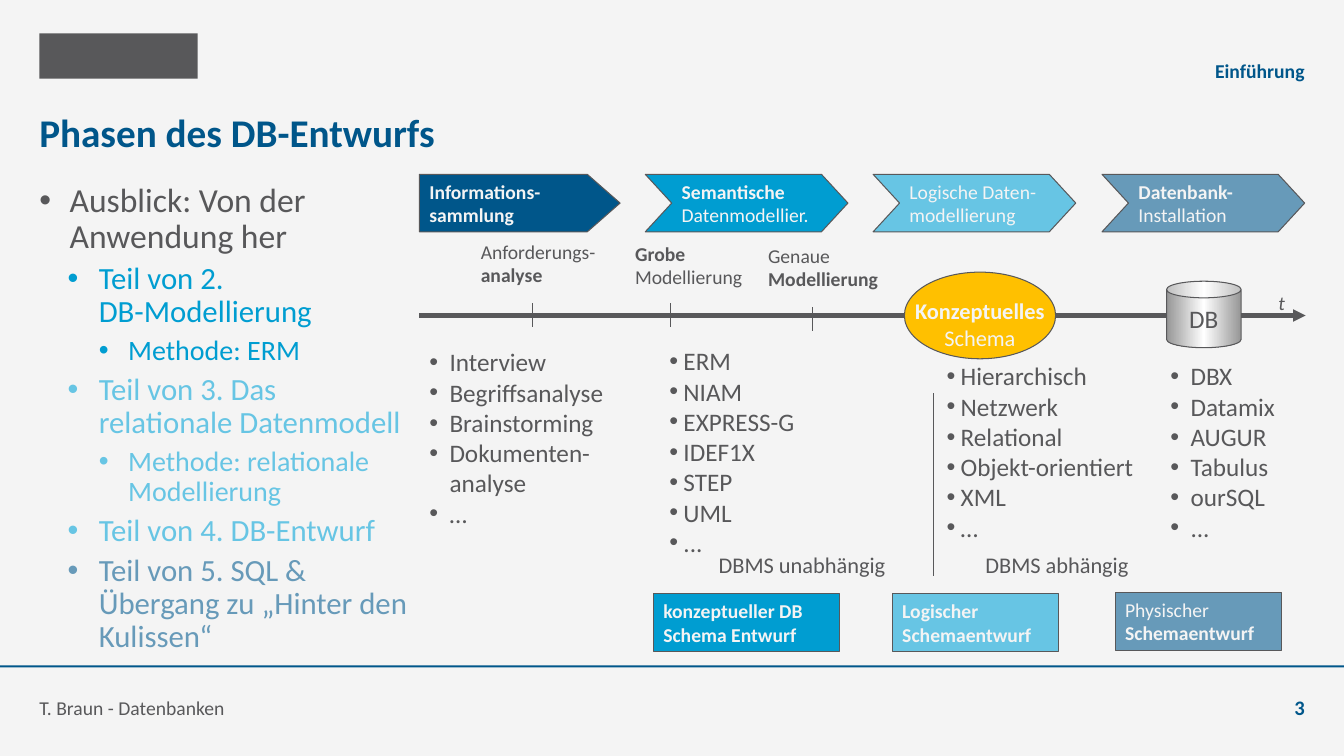
import copy

import pptx
import pptx.dml.color
import pptx.enum.shapes
import pptx.enum.text
import pptx.oxml
import pptx.oxml.ns
import pptx.util
from pptx.util import Inches

SHAPE = pptx.enum.shapes.MSO_SHAPE
ALIGN = pptx.enum.text.PP_ALIGN
ANCHOR = pptx.enum.text.MSO_ANCHOR
qn = pptx.oxml.ns.qn

FONT = "Calibri"
PALE, GREY, NAVY = "F4F4F4", "58585A", "00568A"
BLUE, SKY, STEEL, AMBER = "009DD1", "67C5E4", "679AB9", "FFC000"
NO_INSETS = (0, 0, 0, 0)

# ---- Content ----
# text, left, top, width, height, size, colour, bold, align, anchor
FRAME_TEXTS = [
    ("Phasen des DB-Entwurfs", 0.39, 0.99, 12.55, 0.63, 28, NAVY, True, ALIGN.LEFT, ANCHOR.MIDDLE),
    ("Einführung", 3.93, 0.43, 9.01, 0.39, 14, NAVY, True, ALIGN.RIGHT, ANCHOR.BOTTOM),
    ("T. Braun - Datenbanken", 0.39, 6.75, 9.2, 0.39, 14, GREY, False, ALIGN.LEFT, ANCHOR.BOTTOM),
    ("3", 12.15, 6.75, 0.79, 0.39, 14.7, NAVY, True, ALIGN.RIGHT, ANCHOR.BOTTOM),
]

# level, text, colour
OUTLINE = [
    (0, "Ausblick: Von der\nAnwendung her", GREY),
    (1, "Teil von 2.\nDB-Modellierung", BLUE),
    (2, "Methode: ERM", BLUE),
    (1, "Teil von 3. Das relationale Datenmodell", SKY),
    (2, "Methode: relationale Modellierung", SKY),
    (1, "Teil von 4. DB-Entwurf", SKY),
    (1, "Teil von 5. SQL & Übergang zu „Hinter den Kulissen“", STEEL),
]
LEVELS = [(24, 0.3, 0.3), (22, 0.59, 0.31), (20, 0.88, 0.29)]  # size, margin, hanging

# shape, adjustment, left, width, colour, lines of (text, bold)
PHASES = [
    (SHAPE.PENTAGON, 0.57, 4.16, 1.99, NAVY, [("Informations-", True), ("sammlung", True)]),
    (SHAPE.CHEVRON, 0.46, 6.4, 2.01, BLUE, [("Semantische", True), ("Datenmodellier.", False)]),
    (SHAPE.CHEVRON, 0.46, 8.66, 2.01, SKY, [("Logische Daten-", False), ("modellierung", False)]),
    (SHAPE.CHEVRON, 0.46, 10.93, 2.01, STEEL, [("Datenbank-", True), ("Installation", False)]),
]

# left, top, width, tick x, tick top, lines
MILESTONES = [
    (4.67, 2.33, 1.35, 5.28, 3.01, [("Anforderungs-", False), ("analyse", True)]),
    (6.2, 2.35, 1.28, 6.65, 3.01, [("Grobe", True), ("Modellierung", False)]),
    (7.52, 2.37, 1.3, 8.06, 3.05, [("Genaue", False), ("Modellierung", True)]),
]
TICK = 0.23

# left, top, width, height, hanging, entries
LISTS = [
    (4.16, 3.39, 1.95, 1.92, 0.2,
     ["Interview", "Begriffsanalyse", "Brainstorming", "Dokumenten-\nanalyse", "…"]),
    (6.54, 3.38, 1.49, 2.22, 0.14,
     ["ERM", "NIAM", "EXPRESS-G", "IDEF1X", "STEP", "UML", "..."]),
    (9.29, 3.53, 2.11, 1.92, 0.14,
     ["Hierarchisch", "Netzwerk", "Relational", "Objekt-orientiert", "XML", "…"]),
    (11.51, 3.53, 1.27, 1.92, 0.2,
     ["DBX", "Datamix", "AUGUR", "Tabulus", "ourSQL", "..."]),
]

# shape, adjustments, left, top, width, height, text, align, wrap
SCOPES = [
    (SHAPE.LEFT_ARROW, (0.68, 0.89), 6.78, 5.35, 2.05, 0.51, "DBMS unabhängig", ALIGN.LEFT, False),
    (SHAPE.RIGHT_ARROW, (0.52, 0.68), 9.35, 5.27, 2.12, 0.67, "DBMS abhängig", ALIGN.RIGHT, True),
]

# left, top, width, colour, lines
DESIGNS = [
    (6.48, 5.89, 1.85, BLUE, [("konzeptueller DB", True), ("Schema Entwurf", True)]),
    (8.85, 5.89, 1.65, SKY, [("Logischer", True), ("Schemaentwurf", True)]),
    (11.06, 5.88, 1.65, STEEL, [("Physischer", False), ("Schemaentwurf", True)]),
]
BLOCK_HEIGHT = 0.57

deck = pptx.Presentation()
deck.slide_width, deck.slide_height = Inches(13.33), Inches(7.5)
page = deck.slides.add_slide(deck.slide_layouts[6])


# ---- Helpers ----
def rgb(code):
    return pptx.dml.color.RGBColor.from_string(code)


def prepare(frame, anchor=ANCHOR.TOP, wrap=False, insets=(0.1, 0.05, 0.1, 0.05)):
    frame.word_wrap = wrap
    frame.vertical_anchor = anchor
    frame.margin_left, frame.margin_top, frame.margin_right, frame.margin_bottom = map(Inches, insets)


def add_para(frame, text, size, color, bold=False, italic=False, align=ALIGN.LEFT):
    first = frame.paragraphs[0]
    para = frame.add_paragraph() if first.runs else first
    para.alignment = align
    for number, part in enumerate(text.split("\n")):
        if number:
            para.add_line_break()
        span = para.add_run()
        span.text = part
        span.font.name, span.font.size = FONT, pptx.util.Pt(size)
        span.font.bold, span.font.italic = bold, italic
        span.font.color.rgb = rgb(color)
    return para


def add_bullet(para, margin, hanging):
    props = para._p.get_or_add_pPr()
    props.set("marL", str(Inches(margin)))
    props.set("indent", str(-Inches(hanging)))
    for tag, name, value in (("a:buFont", "typeface", "Arial"), ("a:buChar", "char", "•")):
        props.append(props.makeelement(qn(tag), {name: value}))


def add_text(left, top, width, height, **layout):
    box = page.shapes.add_textbox(*map(Inches, (left, top, width, height)))
    prepare(box.text_frame, **layout)
    return box.text_frame


def add_block(kind, left, top, width, height, fill=None, line=GREY, adjust=(), **layout):
    block = page.shapes.add_shape(kind, *map(Inches, (left, top, width, height)))
    block.shadow.inherit = False
    for number, value in enumerate(adjust):
        block.adjustments[number] = value
    if fill:
        block.fill.solid()
        block.fill.fore_color.rgb = rgb(fill)
    else:
        block.fill.background()
    if line:
        block.line.color.rgb = rgb(line)
        block.line.width = pptx.util.Pt(0.75)
    else:
        block.line.fill.background()
    prepare(block.text_frame, **layout)
    return block


def add_line(x1, y1, x2, y2, width=0.75):
    line = page.shapes.add_connector(pptx.enum.shapes.MSO_CONNECTOR.STRAIGHT,
                                     *map(Inches, (x1, y1, x2, y2)))
    line.line.color.rgb = rgb(GREY)
    line.line.width = pptx.util.Pt(width)
    props = line.element.spPr
    props.append(props.makeelement(qn("a:effectLst"), {}))
    return line


def add_lines(frame, lines, size, color, align=ALIGN.LEFT):
    for text, bold in lines:
        add_para(frame, text, size, color, bold, align=align)


# ---- Background, emblem block, footer rule, frame texts ----
page.background.fill.solid()
page.background.fill.fore_color.rgb = rgb(PALE)
add_block(SHAPE.RECTANGLE, 0.39, 0.33, 1.57, 0.45, GREY, None)
add_block(SHAPE.RECTANGLE, 0, 6.6, 13.33, 0.02, NAVY, None)
for text, left, top, width, height, size, color, bold, align, anchor in FRAME_TEXTS:
    frame = add_text(left, top, width, height, anchor=anchor, wrap=True, insets=NO_INSETS)
    add_para(frame, text, size, color, bold, align=align)

# ---- Outline on the left ----
frame = add_text(0.39, 1.82, 3.72, 4.64, wrap=True, insets=NO_INSETS)
for level, text, color in OUTLINE:
    size, margin, hanging = LEVELS[level]
    para = add_para(frame, text, size, color)
    para.level = level
    para.line_spacing, para.space_before = 0.9, pptx.util.Pt(5)
    add_bullet(para, margin, hanging)

# ---- Phase arrows ----
for kind, adjust, left, width, color, lines in PHASES:
    block = add_block(kind, left, 1.73, width, BLOCK_HEIGHT, color, adjust=[adjust], anchor=ANCHOR.MIDDLE)
    add_lines(block.text_frame, lines, 14, PALE)

# ---- Time axis with milestones ----
axis = add_line(4.16, 3.13, 12.95, 3.13, 3)
stroke = axis.element.spPr.find(qn("a:ln"))
stroke.append(stroke.makeelement(qn("a:tailEnd"), {"type": "triangle"}))
add_para(add_text(12.58, 2.84, 0.27, 0.34), "t", 14, GREY, italic=True)
for left, top, width, tick_x, tick_top, lines in MILESTONES:
    add_lines(add_text(left, top, width, BLOCK_HEIGHT), lines, 14, GREY)
    add_line(tick_x, tick_top, tick_x, tick_top + TICK)

# ---- Method and system lists ----
for left, top, width, height, hanging, entries in LISTS:
    frame = add_text(left, top, width, height)
    for entry in entries:
        add_bullet(add_para(frame, entry, 18, GREY), hanging, hanging)

# ---- Divider and its two sides ----
add_line(9.26, 3.9, 9.26, 5.71)
for kind, adjust, left, top, width, height, text, align, wrap in SCOPES:
    block = add_block(kind, left, top, width, height, None, PALE, adjust, wrap=wrap, insets=(0.04,) * 4)
    add_para(block.text_frame, text, 16, GREY, align=align)

# ---- Design results ----
for left, top, width, color, lines in DESIGNS:
    block = add_block(SHAPE.RECTANGLE, left, top, width, BLOCK_HEIGHT, color, anchor=ANCHOR.MIDDLE)
    add_lines(block.text_frame, lines, 14, PALE)

# ---- Schema ellipse and database can ----
schema = add_block(SHAPE.OVAL, 8.97, 2.7, 1.5, 0.86, AMBER, insets=(0.1, 0.12, 0.1, 0.05))
add_lines(schema.text_frame, [("Konzeptuelles", True), ("Schema", False)], 16, PALE, ALIGN.CENTER)

database = add_block(SHAPE.CAN, 11.57, 2.79, 0.74, 0.66, adjust=[0.25], anchor=ANCHOR.MIDDLE)
add_para(database.text_frame, "DB", 18, GREY, align=ALIGN.CENTER)
database.fill.gradient()
database.fill.gradient_angle = 0
first_stop = next(database.element.iter(qn("a:gs")))
first_stop.addnext(copy.deepcopy(first_stop))
for stop, place, color in zip(database.fill.gradient_stops, (0, 0.5, 1), ("969696", "FFFFFF", "969696")):
    stop.position = place
    stop.color.rgb = rgb(color)

deck.save("out.pptx")
